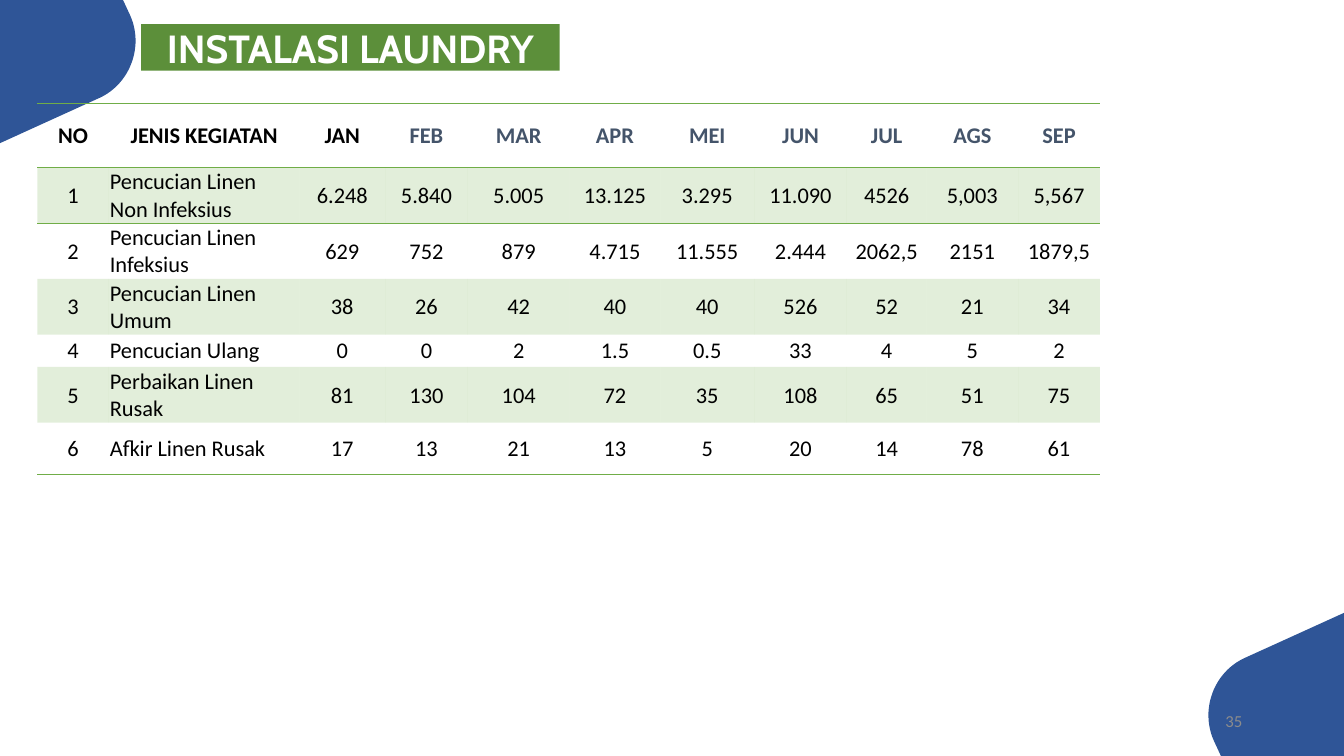
"""Build the laundry installation activity slide."""
from dataclasses import dataclass
from typing import NamedTuple

from lxml import etree
from pptx import Presentation
from pptx import util as u
from pptx.dml import color
from pptx.enum import shapes, text
from pptx.oxml import ns


@dataclass(frozen=True)
class Theme:
    navy: str = "2F5597"
    green: str = "70AD47"
    title_green: str = "5C8F3A"
    slate: str = "44546A"
    black: str = "000000"
    white: str = "FFFFFF"
    grey: str = "8C8C8C"
    title_font: str = "Cabin"
    body_font: str = "Calibri"
    title_size: int = 28
    table_size: int = 16
    number_size: int = 12
    band_opacity: int = 20
    rule_width: int = 1


class Box(NamedTuple):
    left: float
    top: float
    width: float
    height: float


class Point(NamedTuple):
    x: float
    y: float


@dataclass(frozen=True)
class Activity:
    name: str
    values: str
    height: float = 0.51


THEME = Theme()
SLIDE = Point(13.33, 7.5)
TITLE_BOX = Box(1.4, 0.24, 4.15, 0.46)
TABLE_BOX = Box(0.37, 1.03, 10.53, 3.69)
NUMBER_BOX = Box(9.42, 6.95, 3, 0.4)
CORNER_CURVE = [Point(1.29, 0.15), Point(1.43, 0.46), Point(1.29, 0.83), Point(0.99, 0.97)]
CURVE_STEPS = 24
COLUMN_WIDTHS = [0.71, 1.89, 0.85, 0.82, 1.01, 0.9, 0.93, 0.92, 0.79, 0.91, 0.81]
HEADER_HEIGHT = 0.63
HEADER_INSETS = (0.2, 0.08, 0.2, 0.08)
BODY_INSETS = (0.01, 0.01, 0.01, 0)
HEADERS = ["NO", "JENIS KEGIATAN", *"JAN FEB MAR APR MEI JUN JUL AGS SEP".split()]
DARK_HEADERS = 3
NO_STYLE = "{2D5ABB26-0587-4C30-8999-92F81FD0307C}"
ACTIVITIES = [
    Activity("Pencucian Linen Non Infeksius",
             "6.248 5.840 5.005 13.125 3.295 11.090 4526 5,003 5,567"),
    Activity("Pencucian Linen Infeksius", "629 752 879 4.715 11.555 2.444 2062,5 2151 1879,5"),
    Activity("Pencucian Linen Umum", "38 26 42 40 40 526 52 21 34"),
    Activity("Pencucian Ulang", "0 0 2 1.5 0.5 33 4 5 2", 0.32),
    Activity("Perbaikan Linen Rusak", "81 130 104 72 35 108 65 51 75"),
    Activity("Afkir Linen Rusak", "17 13 21 13 5 20 14 78 61"),
]


def rgb(value: str) -> color.RGBColor:
    return color.RGBColor.from_string(value)


def add_run(frame, content: str, font: str, size: int, colour: str,
            align=text.PP_ALIGN.CENTER, bold: bool = False) -> None:
    paragraph = frame.paragraphs[0]
    paragraph.alignment = align
    run = paragraph.add_run()
    run.text = content
    run.font.name = font
    run.font.size = u.Pt(size)
    run.font.bold = bold
    run.font.color.rgb = rgb(colour)


def corner_outline() -> list[Point]:
    start, first, second, end = CORNER_CURVE
    outline = [Point(0, 0), Point(1.22, 0)]
    for step in range(CURVE_STEPS + 1):
        t = step / CURVE_STEPS
        weights = ((1 - t) ** 3, 3 * t * (1 - t) ** 2, 3 * t * t * (1 - t), t ** 3)
        outline.append(Point(
            sum(w * p.x for w, p in zip(weights, (start, first, second, end))),
            sum(w * p.y for w, p in zip(weights, (start, first, second, end)))))
    return outline + [Point(0, 1.42)]


def add_corner(slide, opposite: bool) -> None:
    points = corner_outline()
    if opposite:
        points = [Point(SLIDE.x - p.x, SLIDE.y - p.y) for p in points]
    vertices = [(u.Inches(p.x), u.Inches(p.y)) for p in points]
    builder = slide.shapes.build_freeform(*vertices[0])
    builder.add_line_segments(vertices[1:], close=True)
    corner = builder.convert_to_shape()
    corner.shadow.inherit = False
    corner.fill.solid()
    corner.fill.fore_color.rgb = rgb(THEME.navy)
    corner.line.fill.background()


def format_title(slide) -> None:
    title = slide.shapes.title
    title.left, title.top, title.width, title.height = map(u.Inches, TITLE_BOX)
    geometry = etree.Element(ns.qn("a:prstGeom"), prst="roundRect")
    etree.SubElement(geometry, ns.qn("a:avLst"))
    title._element.spPr.find(ns.qn("a:xfrm")).addnext(geometry)
    title.fill.solid()
    title.fill.fore_color.rgb = rgb(THEME.title_green)
    frame = title.text_frame
    frame.auto_size = text.MSO_AUTO_SIZE.NONE
    frame.vertical_anchor = text.MSO_ANCHOR.MIDDLE
    add_run(frame, "INSTALASI LAUNDRY", THEME.title_font, THEME.title_size,
            THEME.white, bold=True)


def add_rules(cell, sides: list[str]) -> None:
    properties = cell._tc.get_or_add_tcPr()
    for position, side in enumerate(sides):
        rule = etree.Element(ns.qn(f"a:ln{side}"), w=str(u.Pt(THEME.rule_width)))
        fill = etree.SubElement(rule, ns.qn("a:solidFill"))
        etree.SubElement(fill, ns.qn("a:srgbClr"), val=THEME.green)
        properties.insert(position, rule)


def fill_cell(cell, banded: bool) -> None:
    if not banded:
        cell.fill.background()
        return
    cell.fill.solid()
    cell.fill.fore_color.rgb = rgb(THEME.green)
    colour = cell._tc.tcPr.find(".//" + ns.qn("a:srgbClr"))
    etree.SubElement(colour, ns.qn("a:alpha"), val=str(THEME.band_opacity * 1000))


def add_activity_table(slide) -> None:
    rows = [HEADERS] + [[str(number), activity.name, *activity.values.split()]
                        for number, activity in enumerate(ACTIVITIES, 1)]
    frame = slide.shapes.add_table(len(rows), len(HEADERS), *map(u.Inches, TABLE_BOX))
    table = frame.table
    table.first_row = table.horz_banding = False
    frame._element.find(".//" + ns.qn("a:tableStyleId")).text = NO_STYLE
    for column, width in zip(table.columns, COLUMN_WIDTHS):
        column.width = u.Inches(width)
    heights = [HEADER_HEIGHT] + [activity.height for activity in ACTIVITIES]
    for row, height in zip(table.rows, heights):
        row.height = u.Inches(height)
    rules = {0: ["T", "B"], 1: ["T"], len(rows) - 1: ["B"]}
    for i, row in enumerate(rows):
        header = i == 0
        insets = HEADER_INSETS if header else BODY_INSETS
        for j, content in enumerate(row):
            cell = table.cell(i, j)
            cell.vertical_anchor = text.MSO_ANCHOR.MIDDLE
            (cell.margin_left, cell.margin_top,
             cell.margin_right, cell.margin_bottom) = map(u.Inches, insets)
            fill_cell(cell, i % 2 == 1)
            add_rules(cell, rules.get(i, []))
            named = j == 1 and not header
            add_run(cell.text_frame, content, THEME.body_font, THEME.table_size,
                    THEME.slate if header and j >= DARK_HEADERS else THEME.black,
                    text.PP_ALIGN.LEFT if named else text.PP_ALIGN.CENTER, header)


def add_page_number(slide) -> None:
    frame = slide.shapes.add_textbox(*map(u.Inches, NUMBER_BOX)).text_frame
    frame.word_wrap = True
    frame.vertical_anchor = text.MSO_ANCHOR.MIDDLE
    add_run(frame, "35", THEME.body_font, THEME.number_size, THEME.grey, text.PP_ALIGN.RIGHT)


def main() -> None:
    presentation = Presentation()
    presentation.slide_width, presentation.slide_height = map(u.Inches, SLIDE)
    slide = presentation.slides.add_slide(presentation.slide_layouts.get_by_name("Title Only"))
    for opposite in (True, False):
        add_corner(slide, opposite)
    add_activity_table(slide)
    format_title(slide)
    add_page_number(slide)
    presentation.save("out.pptx")


if __name__ == "__main__":
    main()
